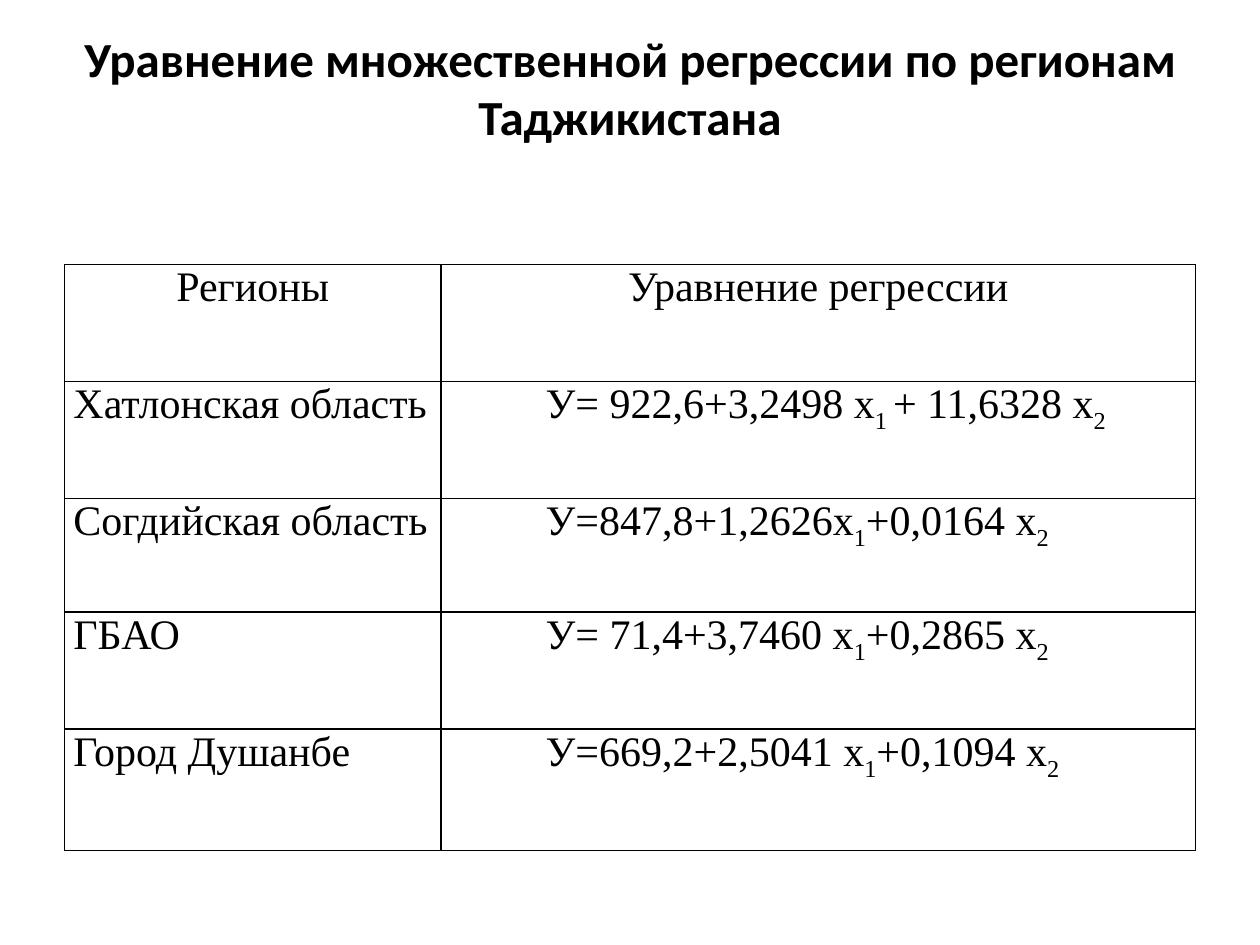
from lxml import etree
from pptx import Presentation
from pptx import util as u
from pptx.dml.color import RGBColor
from pptx.enum import text
from pptx.oxml import ns

# Content: an equation is a list of (text, is subscript)
TITLE = "Уравнение множественной регрессии по регионам Таджикистана"
HEADS = ["Регионы", "Уравнение регрессии"]
ROWS = [
    ("Хатлонская область", "У= 922,6+3,2498 х", "1 ", "+ 11,6328 х"),
    ("Согдийская область", "У=847,8+1,2626х", "1", "+0,0164 х"),
    ("ГБАО", "У= 71,4+3,7460 х", "1", "+0,2865 х"),
    ("Город Душанбе", "У=669,2+2,5041 х", "1", "+0,1094 х"),
]
BLACK = RGBColor(0, 0, 0)
WIDTHS = [7.59, 15.21]
HEIGHTS = [2.36, 2.36, 2.29, 2.36, 2.44]
INDENT = u.Cm(1.93)
ALIGN = text.PP_ALIGN


def style(run, face, size, bold=False):
    font = run.font
    font.name, font.size, font.bold = face, u.Pt(size), bold
    font.color.rgb = BLACK


def border(cell):
    props = cell._tc.get_or_add_tcPr()
    for spot, side in enumerate(("lnL", "lnR", "lnT", "lnB")):
        line = etree.Element(ns.qn("a:" + side), w=str(u.Pt(1)))
        fill = etree.SubElement(line, ns.qn("a:solidFill"))
        etree.SubElement(fill, ns.qn("a:srgbClr"), val=str(BLACK))
        props.insert(spot, line)


def write(cell, parts, align, indent=0):
    cell.fill.background()
    border(cell)
    cell.margin_left = cell.margin_right = u.Cm(0.18)
    cell.margin_top = cell.margin_bottom = 0
    par = cell.text_frame.paragraphs[0]
    par.alignment = align
    if indent:
        par._p.get_or_add_pPr().set("marL", str(indent))
    for words, sub in parts:
        run = par.add_run()
        run.text = words
        style(run, "Times New Roman", 24)
        if sub:
            run.font._element.set("baseline", "-25000")


deck = Presentation()
deck.slide_width, deck.slide_height = u.Cm(25.4), u.Cm(19.05)
slide = deck.slides.add_slide(deck.slide_layouts[6])

# Title, set slightly above the middle of its box
box = slide.shapes.add_textbox(u.Cm(1.27), u.Cm(0.76), u.Cm(22.86), u.Cm(3.18))
frame = box.text_frame
frame.word_wrap = True
frame.vertical_anchor = text.MSO_ANCHOR.MIDDLE
frame.margin_bottom = u.Cm(1.32)
frame.text = TITLE
head = frame.paragraphs[0]
head.alignment = ALIGN.CENTER
style(head.runs[0], "Calibri", 28, True)

# Table
grid = slide.shapes.add_table(
    len(HEIGHTS), len(WIDTHS), u.Cm(1.3), u.Cm(5.33),
    u.Cm(sum(WIDTHS)), u.Cm(sum(HEIGHTS))).table
grid.horz_banding = False
for col, width in zip(grid.columns, WIDTHS):
    col.width = u.Cm(width)
for row, height in zip(grid.rows, HEIGHTS):
    row.height = u.Cm(height)

for col, name in enumerate(HEADS):
    write(grid.cell(0, col), [(name, False)], ALIGN.CENTER)
for row, (place, start, one, end) in enumerate(ROWS, 1):
    write(grid.cell(row, 0), [(place, False)], ALIGN.JUSTIFY)
    terms = [(start, False), (one, True), (end, False), ("2", True)]
    write(grid.cell(row, 1), terms, ALIGN.JUSTIFY, INDENT)

deck.save("out.pptx")
